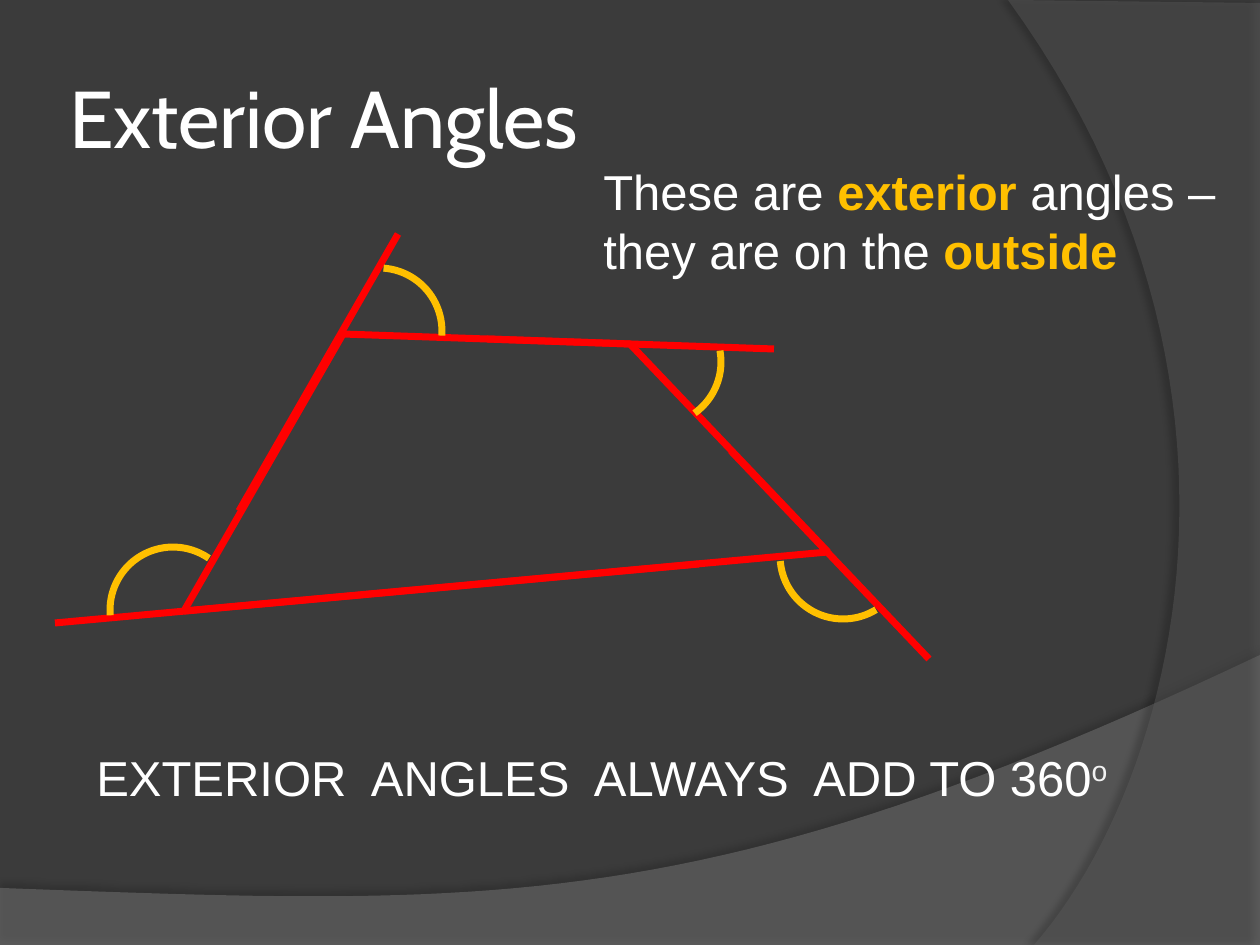
from dataclasses import dataclass

from lxml.etree import SubElement
from pptx import Presentation
from pptx.dml.color import RGBColor as Rgb
from pptx.enum.shapes import MSO_CONNECTOR as Link, MSO_SHAPE as Shape
from pptx.enum.text import MSO_ANCHOR as Anchor, MSO_AUTO_SIZE as Auto, PP_ALIGN as Align
from pptx.oxml.ns import qn
from pptx.util import Emu, Pt

SCALE = 914400 / 126
STEPS = 48
INK = {
    "back": "3B3B3B",
    "base": "7F7F7F",
    "side": "5E5E5E",
    "shade": "000000",
    "text": "FFFFFF",
    "mark": "FFC000",
    "sign": "F2F2F2",
    "edge": "FF0000",
}
Point = tuple[int, int]


@dataclass
class Band:
    start: list[Point]
    curve: list[Point]
    ink: str
    alpha: int
    shade: int
    dist: float
    turn: int


@dataclass
class Side:
    start: Point
    end: Point
    shift: Point


@dataclass
class Arc:
    left: int
    top: int
    turn: float
    ends: tuple[float, float]


@dataclass
class Run:
    text: str
    ink: str = "text"
    bold: bool = False


@dataclass
class Note:
    box: tuple[int, int, int, int]
    runs: list[Run]


BANDS = [
    Band([(0, 888), (0, 946), (1260, 946), (1260, 655)],
         [(704, 919), (493, 906), (0, 888)], "base", 45, 35, 3.5, 270),
    Band([(1260, 3), (1260, 945), (1034, 945)],
         [(1178, 780), (1283, 378), (1008, 0)], "side", 40, 45, 4, 180),
]
NE, NW, SW, SE = (630, 344), (343, 334), (184, 611), (828, 552)
SIDES = [
    Side(NE, NW, (144, 5)),
    Side(NW, SW, (55, -100)),
    Side(SE, SW, (-129, 12)),
    Side(SE, NE, (101, 107)),
]
ARCS = [
    Arc(316, 268, 4.2, (162, 0)),
    Arc(780, 493, 155.3, (157.87, 12.06)),
    Arc(595, 299, 54.5, (177.12, 0)),
    Arc(110, 547, 265.2, (162, 23.76)),
]
RULE = Note((84, 741, 1071, 72), [
    Run("EXTERIOR  ANGLES  ALWAYS  ADD TO 360"), Run("o", "sign")])
HINT = Note((591, 155, 719, 131), [
    Run("These are "), Run("exterior ", "mark", True),
    Run("angles – they are on the "), Run("outside", "mark", True)])


def px(num: float) -> Emu:
    return Emu(round(num * SCALE))


def hue(name: str) -> Rgb:
    return Rgb.from_string(INK[name])


def bend(a: Point, b: Point, c: Point, d: Point) -> list[tuple[Emu, Emu]]:
    dots = []
    for i in range(1, STEPS + 1):
        t = i / STEPS
        u = 1 - t
        mix = (u ** 3, 3 * u * u * t, 3 * u * t * t, t ** 3)
        x, y = (sum(m * p[k] for m, p in zip(mix, (a, b, c, d))) for k in (0, 1))
        dots.append((px(x), px(y)))
    return dots


def draw_band(shapes, band: Band) -> None:
    dots = [(px(x), px(y)) for x, y in band.start]
    dots += bend(band.start[-1], *band.curve)
    pen = shapes.build_freeform(*dots[0], scale=1.0)
    pen.add_line_segments(dots[1:], close=True)
    form = pen.convert_to_shape()
    form.fill.solid()
    form.fill.fore_color.rgb = hue(band.ink)
    form.line.fill.background()
    form.shadow.inherit = False
    props = form.element.spPr
    tint = props.find(qn("a:solidFill")).find(qn("a:srgbClr"))
    SubElement(tint, qn("a:alpha"), val=str(band.alpha * 1000))
    shade = SubElement(
        props.find(qn("a:effectLst")), qn("a:outerShdw"),
        blurRad=str(Pt(4)), dist=str(Pt(band.dist)),
        dir=str(band.turn * 60000), rotWithShape="0")
    tint = SubElement(shade, qn("a:srgbClr"), val=INK["shade"])
    SubElement(tint, qn("a:alpha"), val=str(band.shade * 1000))


def draw_line(shapes, side: Side, shift: Point = (0, 0)) -> None:
    dx, dy = shift
    ends = [px(n) for x, y in (side.start, side.end) for n in (x + dx, y + dy)]
    line = shapes.add_connector(Link.STRAIGHT, *ends)
    line.line.color.rgb = hue("edge")
    line.line.width = Pt(4)
    SubElement(line.element.spPr, qn("a:effectLst"))


def draw_arc(shapes, arc: Arc) -> None:
    form = shapes.add_shape(Shape.ARC, px(arc.left), px(arc.top), px(126), px(126))
    form.rotation = arc.turn
    for i, end in enumerate(arc.ends):
        form.adjustments[i] = end
    form.fill.background()
    form.line.color.rgb = hue("mark")
    form.line.width = Pt(4)
    form.shadow.inherit = False


def draw_note(shapes, note: Note):
    box = shapes.add_textbox(*map(px, note.box))
    frame = box.text_frame
    frame.word_wrap = True
    frame.auto_size = Auto.SHAPE_TO_FIT_TEXT
    para = frame.paragraphs[0]
    para.font.size = Pt(28)
    para.font.name = "Arial"
    for item in note.runs:
        run = para.add_run()
        run.text = item.text
        run.font.color.rgb = hue(item.ink)
        run.font.bold = item.bold
    return box


def set_title(title) -> None:
    title.left, title.top, title.width, title.height = map(px, (63, 38, 1029, 157))
    frame = title.text_frame
    frame.text = "Exterior Angles"
    frame.auto_size = Auto.NONE
    frame.vertical_anchor = Anchor.MIDDLE
    frame.margin_left = frame.margin_right = px(6)
    frame.margin_top = frame.margin_bottom = px(6)
    para = frame.paragraphs[0]
    para.alignment = Align.LEFT
    para.font.size = Pt(46)
    para.font.name = "Cabin"
    para.font.color.rgb = hue("text")


def main() -> None:
    deck = Presentation()
    deck.slide_width, deck.slide_height = px(1260), px(945)
    slide = deck.slides.add_slide(deck.slide_layouts[5])
    slide.background.fill.solid()
    slide.background.fill.fore_color.rgb = hue("back")
    shapes = slide.shapes
    for band in BANDS:
        draw_band(shapes, band)
    set_title(shapes.title)
    shapes.element.append(shapes.title.element)
    for side in SIDES:
        draw_line(shapes, side)
    for side in SIDES:
        draw_line(shapes, side, side.shift)
    for arc in ARCS:
        draw_arc(shapes, arc)
    rule = draw_note(shapes, RULE)
    rule.element.xpath(".//a:rPr")[-1].set("baseline", "30000")
    draw_note(shapes, HINT)
    deck.save("out.pptx")


if __name__ == "__main__":
    main()
